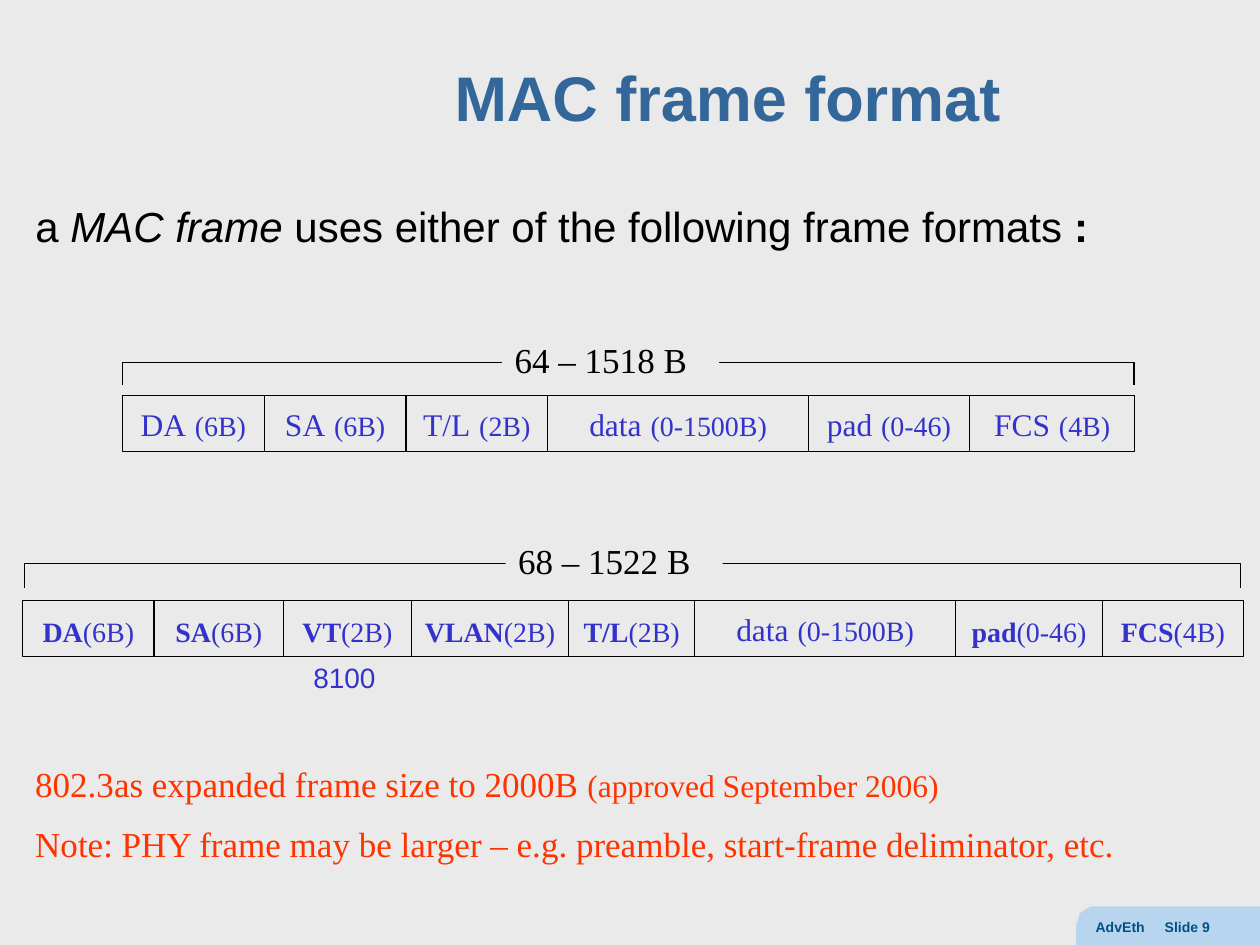
from lxml import etree
from pptx import Presentation
from pptx.dml.color import RGBColor
from pptx.enum.shapes import MSO_CONNECTOR, MSO_SHAPE
from pptx.enum.text import MSO_ANCHOR, MSO_AUTO_SIZE, PP_ALIGN
from pptx.oxml.ns import qn
from pptx.util import Pt

LINE = MSO_CONNECTOR.STRAIGHT
RECT = MSO_SHAPE.RECTANGLE
TOP, MIDDLE = MSO_ANCHOR.TOP, MSO_ANCHOR.MIDDLE
LEFT, CENTER = PP_ALIGN.LEFT, PP_ALIGN.CENTER
FIXED = MSO_AUTO_SIZE.NONE

SANS, SERIF = "Arial", "Times New Roman"
COLORS = {
    "back": "EAEAEA",
    "title": "336699",
    "text": "000000",
    "field": "3333CC",
    "note": "FF3300",
    "tab": "B7D5EF",
    "footer": "005081",
}

# Field name, size in bytes, cell width
BASIC = [
    ("DA", "6B", 81), ("SA", "6B", 81), ("T/L", "2B", 81),
    ("data", "0-1500B", 149), ("pad", "0-46", 92), ("FCS", "4B", 94.5),
]
TAGGED = [
    ("DA", "6B", 75), ("SA", "6B", 74), ("VT", "2B", 73),
    ("VLAN", "2B", 90), ("T/L", "2B", 72), ("data", "0-1500B", 149),
    ("pad", "0-46", 84), ("FCS", "4B", 80.5),
]


def color(key):
    return RGBColor.from_string(COLORS[key])


def write(para, runs, key, face, align=LEFT):
    """Add runs given as (text, size, bold, italic)."""
    para.alignment = align
    for text, size, bold, slant in runs:
        run = para.add_run()
        run.text = text
        font = run.font
        font.name, font.size = face, Pt(size)
        font.bold, font.italic = bold, slant
        font.color.rgb = color(key)


def place(shape, x, y, w, h):
    shape.left, shape.top = Pt(x), Pt(y)
    shape.width, shape.height = Pt(w), Pt(h)


def add_text(slide, x, y, w, h):
    frame = slide.shapes.add_textbox(Pt(x), Pt(y), Pt(w), Pt(h)).text_frame
    frame.word_wrap = True
    return frame


def add_box(slide, x, y, w, h):
    box = slide.shapes.add_shape(RECT, Pt(x), Pt(y), Pt(w), Pt(h))
    box.shadow.inherit = False
    box.text_frame.vertical_anchor = TOP
    return box


def add_line(slide, x1, y1, x2, y2):
    line = slide.shapes.add_connector(LINE, Pt(x1), Pt(y1), Pt(x2), Pt(y2))
    line.line.color.rgb = color("text")
    line.line.width = Pt(0.75)
    props = line.element.find(qn("p:spPr"))
    etree.SubElement(props, qn("a:effectLst"))


def add_cell(slide, x, y, w, name, size, bold):
    cell = add_box(slide, x, y, w, 32)
    cell.fill.background()
    cell.line.color.rgb = color("text")
    cell.line.width = Pt(0.75)
    frame = cell.text_frame
    frame.word_wrap = False
    para = frame.paragraphs[0]
    if bold:
        para.line_spacing = 1.25
        runs = [(name, 16, True, False)]
    else:
        runs = [(name, 18, False, False), (" ", 20, False, False)]
    runs.append((f"({size})", 16, False, False))
    write(para, runs, "field", SERIF, CENTER)


def add_frame(slide, x, y, fields, bold):
    for name, size, w in fields:
        add_cell(slide, x, y, w, name, size, bold and name != "data")
        x += w


def add_span(slide, x1, x2, y, drop, label, left):
    """Draw a bracket whose label interrupts the line."""
    add_line(slide, x1, y, x2, y)
    for x in (x1, x2):
        add_line(slide, x, y, x, y + drop)
    box = add_box(slide, left, y - 17, 124, 31)
    box.fill.solid()
    box.fill.fore_color.rgb = color("back")
    box.line.fill.background()
    box.text_frame.word_wrap = True
    write(box.text_frame.paragraphs[0], [(label, 20, False, False)],
          "text", SERIF)


def add_footer(slide):
    edge = [(720, 540), (615, 540), (615, 528.5), (615.5, 525.5),
            (617, 522), (619.5, 519.5), (623, 518), (626, 517.5)]
    form = slide.shapes.build_freeform(720, 517.5, scale=Pt(1))
    form.add_line_segments(edge, close=True)
    tab = form.convert_to_shape()
    tab.shadow.inherit = False
    tab.fill.solid()
    tab.fill.fore_color.rgb = color("tab")
    tab.line.fill.background()

    para = add_text(slide, 619, 521.5, 100, 18).paragraphs[0]
    props = para._p.get_or_add_pPr()
    stops = etree.SubElement(props, qn("a:tabLst"))
    etree.SubElement(stops, qn("a:tab"), pos=str(Pt(39.5)), algn="l")
    write(para, [("AdvEth\tSlide 9", 8, True, False)], "footer", SANS)


def add_title(slide, text):
    title = slide.shapes.title
    place(title, 152.5, 13, 526.5, 90)
    frame = title.text_frame
    frame.auto_size = FIXED
    frame.vertical_anchor = MIDDLE
    para = frame.paragraphs[0]
    para.line_spacing = 0.9
    write(para, [(text, 36, True, False)], "title", SANS, CENTER)


def add_body(slide):
    body = slide.placeholders[1]
    place(body, 13, 105, 692, 396)
    frame = body.text_frame
    frame.auto_size = FIXED
    para = frame.paragraphs[0]
    props = para._p.get_or_add_pPr()
    props.set("marL", str(Pt(27)))
    props.set("indent", str(Pt(-27)))
    etree.SubElement(props, qn("a:buNone"))
    para.line_spacing = 1.2
    para.space_before = Pt(0)
    write(para, [
        ("a ", 24, False, False),
        ("MAC frame", 24, False, True),
        (" uses either of the following frame formats ", 24, False, False),
        (":", 24, True, False),
    ], "text", SANS)


def add_notes(slide):
    frame = add_text(slide, 13, 432, 655, 67)
    write(frame.paragraphs[0], [
        ("802.3as expanded frame size to 2000B ", 20, False, False),
        ("(approved September 2006)", 18, False, False),
    ], "note", SERIF)
    para = frame.add_paragraph()
    para.space_before = Pt(10.5)
    write(para, [("Note: PHY frame may be larger – e.g. preamble, "
                  "start-frame deliminator, etc.", 20, False, False)],
          "note", SERIF)


def main():
    deck = Presentation()
    deck.slide_width, deck.slide_height = Pt(720), Pt(540)
    slide = deck.slides.add_slide(deck.slide_layouts[1])
    slide.background.fill.solid()
    slide.background.fill.fore_color.rgb = color("back")

    # Heading and lead sentence
    add_footer(slide)
    add_title(slide, "MAC frame format")
    add_body(slide)

    # Basic frame
    add_frame(slide, 70, 226, BASIC, False)
    add_span(slide, 70, 648, 207, 13, "64 – 1518 B", 287)

    # Tagged frame
    add_frame(slide, 13, 343, TAGGED, True)
    add_span(slide, 14, 709, 322, 14, "68 – 1522 B", 289)
    para = add_text(slide, 172, 374, 52, 27).paragraphs[0]
    write(para, [("8100", 16, False, False)], "field", SANS)

    # Remarks
    add_notes(slide)
    deck.save("out.pptx")


if __name__ == "__main__":
    main()
